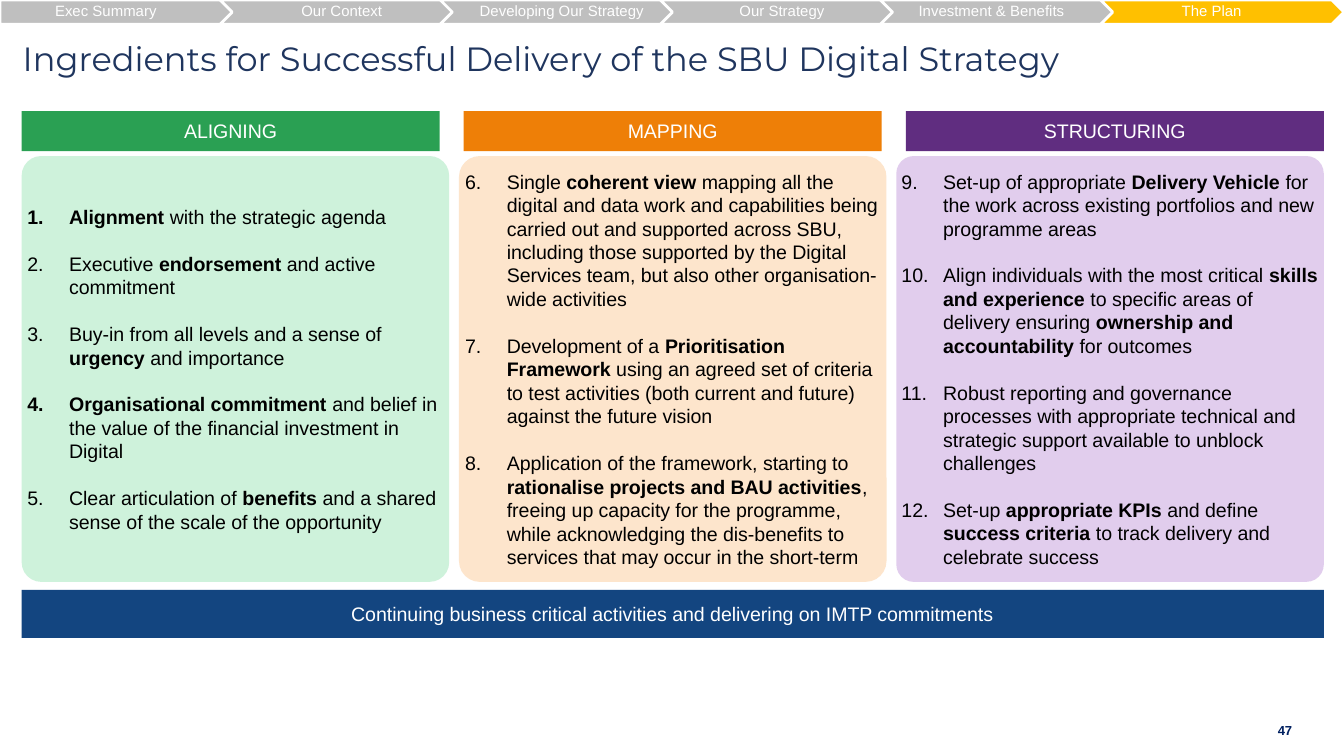
from itertools import accumulate

from lxml import etree
from pptx import Presentation
from pptx.dml.color import RGBColor
from pptx.enum.shapes import MSO_SHAPE
from pptx.enum.text import MSO_ANCHOR, PP_ALIGN
from pptx.oxml.ns import qn
from pptx.util import Cm, Pt

RECTANGLE = MSO_SHAPE.RECTANGLE
ROUNDED = MSO_SHAPE.ROUNDED_RECTANGLE
PENTAGON = MSO_SHAPE.PENTAGON
CHEVRON = MSO_SHAPE.CHEVRON
MIDDLE = MSO_ANCHOR.MIDDLE
LEFT, CENTER = PP_ALIGN.LEFT, PP_ALIGN.CENTER

TITLE = "Ingredients for Successful Delivery of the SBU Digital Strategy"
FOOTER = "Continuing business critical activities and delivering on IMTP commitments"
PAGE_NUMBER = "47"

STEPS = [
    ("Exec Summary", PENTAGON, 4.52, "BFBFBF"),
    ("Our Context", CHEVRON, 5, "BFBFBF"),
    ("Developing Our Strategy", CHEVRON, 5, "BFBFBF"),
    ("Our Strategy", CHEVRON, 5, "BFBFBF"),
    ("Investment & Benefits", CHEVRON, 4.6, "BFBFBF"),
    ("The Plan", CHEVRON, 4.6, "FFC000"),
]

# Each item is a list of runs: plain strings, or one-element tuples for bold.
COLUMNS = [
    ("ALIGNING", "2AA053", "CEF2DB", 0.046, [
        [("Alignment",), " with the strategic agenda"],
        ["Executive ", ("endorsement",), " and active commitment"],
        ["Buy-in from all levels and a sense of ", ("urgency",), " and importance"],
        [("Organisational commitment ",),
         "and belief in the value of the financial investment in Digital"],
        ["Clear articulation of ", ("benefits",),
         " and a shared sense of the scale of the opportunity"],
    ]),
    ("MAPPING", "EE7F07", "FDE5CC", 0.049, [
        ["Single ", ("coherent view ",),
         "mapping all the digital and data work and capabilities being carried out "
         "and supported across SBU, including those supported by the Digital Services "
         "team, but also other organisation-wide activities"],
        ["Development of a ", ("Prioritisation Framework",),
         " using an agreed set of criteria to test activities (both current and "
         "future) against the future vision"],
        ["Application of the framework, starting to ",
         ("rationalise projects and BAU activities",),
         ", freeing up capacity for the programme, while acknowledging the "
         "dis-benefits to services that may occur in the short-term"],
    ]),
    ("STRUCTURING", "602D80", "E1CDED", 0.041, [
        ["Set-up of appropriate ", ("Delivery Vehicle ",),
         "for the work across existing portfolios and new programme areas"],
        ["Align individuals with the most critical ", ("skills and experience ",),
         "to specific areas of delivery ensuring ", ("ownership and accountability",),
         " for outcomes"],
        ["Robust reporting and governance processes with appropriate technical and "
         "strategic support available to unblock challenges"],
        ["Set-up ", ("appropriate KPIs ",), "and define ", ("success criteria ",),
         "to track delivery and celebrate success"],
    ]),
]

SLIDE_WIDTH = 25.4
MARGIN, CONTENT_WIDTH = 0.41, 24.61
HEADER_WIDTH, PANEL_WIDTH = 7.9, 8.08
BODY_SIZE = 10.5
ITEM_GAP = 12.5
INDENT = 0.79


def rgb(value):
    return RGBColor.from_string(value)


def prepare_frame(shape, insets):
    frame = shape.text_frame
    frame.word_wrap = True
    frame.vertical_anchor = MIDDLE
    frame.margin_left, frame.margin_top, frame.margin_right, frame.margin_bottom = map(Cm, insets)
    return frame


def add_run(paragraph, text, size, color, font="Arial", bold=False):
    run = paragraph.add_run()
    run.text = text
    run.font.name = font
    run.font.size = Pt(size)
    run.font.bold = bold
    run.font.color.rgb = rgb(color)


def add_block(slide, kind, box, fill, insets=(0, 0, 0, 0)):
    shape = slide.shapes.add_shape(kind, *map(Cm, box))
    shape.shadow.inherit = False
    shape.fill.solid()
    shape.fill.fore_color.rgb = rgb(fill)
    shape.line.fill.background()
    prepare_frame(shape, insets)
    return shape


def add_label(shape, text, size=BODY_SIZE):
    paragraph = shape.text_frame.paragraphs[0]
    paragraph.alignment = CENTER
    add_run(paragraph, text, size, "FFFFFF")
    return paragraph


def add_text(slide, box, insets, alignment, text, size, color, font="Arial", bold=False):
    frame = prepare_frame(slide.shapes.add_textbox(*map(Cm, box)), insets)
    paragraph = frame.paragraphs[0]
    paragraph.alignment = alignment
    add_run(paragraph, text, size, color, font, bold)


def add_numbered_items(frame, items, start):
    for index, runs in enumerate(items):
        paragraph = frame.add_paragraph() if index else frame.paragraphs[0]
        paragraph.alignment = LEFT
        if index:
            paragraph.space_before = Pt(ITEM_GAP)
        properties = paragraph._p.get_or_add_pPr()
        properties.set("marL", str(Cm(INDENT)))
        properties.set("indent", str(-Cm(INDENT)))
        etree.SubElement(properties, qn("a:buFont"), typeface="+mj-lt")
        etree.SubElement(properties, qn("a:buAutoNum"), type="arabicPeriod", startAt=str(start))
        for run in runs:
            bold = isinstance(run, tuple)
            add_run(paragraph, run[0] if bold else run, BODY_SIZE, "000000", bold=bold)


def column_left(index, width):
    return MARGIN + index * (CONTENT_WIDTH - width) / (len(COLUMNS) - 1)


presentation = Presentation()
presentation.slide_width, presentation.slide_height = Cm(SLIDE_WIDTH), Cm(14.29)
slide = presentation.slides.add_slide(presentation.slide_layouts[6])

add_text(slide, (0.25, -0.03, 23.32, 2.24), (0.18, 0.1, 0.18, 0.1), LEFT,
         TITLE, 18, "1F355E", "Montserrat")

starts = accumulate((len(column[-1]) for column in COLUMNS), initial=1)
for index, (column, start) in enumerate(zip(COLUMNS, starts)):
    heading, header_color, panel_color, corner, items = column
    panel = add_block(slide, ROUNDED, (column_left(index, PANEL_WIDTH), 2.95, PANEL_WIDTH, 8.05),
                      panel_color)
    panel.adjustments[0] = corner
    add_numbered_items(panel.text_frame, items, start)
    header = add_block(slide, RECTANGLE, (column_left(index, HEADER_WIDTH), 2.1, HEADER_WIDTH, 0.76),
                       header_color)
    add_label(header, heading)

footer = add_block(slide, RECTANGLE, (MARGIN, 11.15, CONTENT_WIDTH, 0.91), "134580")
add_label(footer, FOOTER)

step_pitch = (SLIDE_WIDTH - STEPS[-1][2]) / (len(STEPS) - 1)
for index, (name, kind, width, color) in enumerate(STEPS):
    step = add_block(slide, kind, (index * step_pitch, 0, width, 0.46), color,
                     (0.1, 0.05, 0.5, 0.05))
    step.line.color.rgb = rgb("FFFFFF")
    step.line.width = Pt(1.5)
    add_label(step, name, 8).line_spacing = 0.9

add_text(slide, (23.75, 13.51, 1.07, 0.58), (0.15, 0.15, 0.15, 0.15), CENTER,
         PAGE_NUMBER, 7, "002060", bold=True)

presentation.save("out.pptx")
